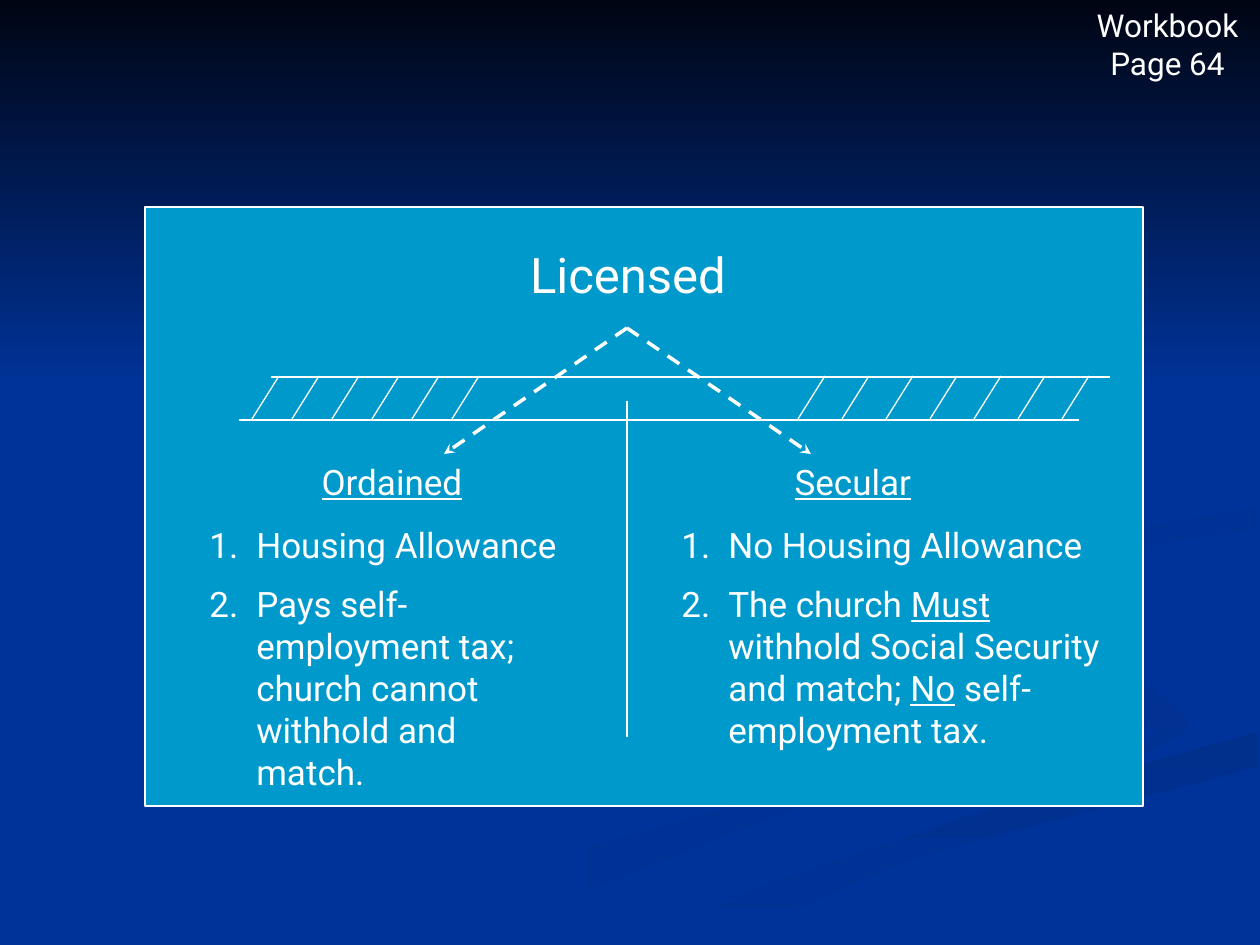
"""Build the slide that compares ordained and secular tax rules for licensed ministers."""
from lxml import etree
from pptx import Presentation
from pptx.dml.color import RGBColor
from pptx.enum.dml import MSO_LINE
from pptx.enum.shapes import MSO_CONNECTOR, MSO_SHAPE
from pptx.enum.text import PP_ALIGN
from pptx.oxml.ns import qn
from pptx.util import Pt

PX = 914400 / 126
WHITE = RGBColor(0xFF, 0xFF, 0xFF)
BLUE = RGBColor(0x00, 0x33, 0x99)
DEEP = RGBColor(0x00, 0x31, 0x93)
DUSK = RGBColor(0x00, 0x2F, 0x8C)
HAZE = RGBColor(0x00, 0x30, 0x91)
NIGHT = RGBColor(0x00, 0x05, 0x14)
CYAN = RGBColor(0x00, 0x99, 0xCC)
FONT = "Roboto"
DASH = MSO_LINE.DASH
LINE = MSO_CONNECTOR.STRAIGHT
RECT = MSO_SHAPE.RECTANGLE
CENTER = PP_ALIGN.CENTER

deck = Presentation()
deck.slide_width, deck.slide_height = round(1260 * PX), round(945 * PX)
slide = deck.slides.add_slide(deck.slide_layouts[6])
slide.background.fill.solid()
slide.background.fill.fore_color.rgb = BLUE
shapes = slide.shapes


def write(area, size, paras, listed=False):
    frame = shapes.add_textbox(*[round(n * PX) for n in area]).text_frame
    frame.word_wrap = True
    for i, runs in enumerate(paras):
        para = frame.paragraphs[0] if i == 0 else frame.add_paragraph()
        if listed:
            props = para._p.get_or_add_pPr()
            props.set("marL", str(round(47 * PX)))
            props.set("indent", str(round(-47 * PX)))
            etree.SubElement(props, qn("a:buFont"), typeface="+mj-lt")
            etree.SubElement(props, qn("a:buAutoNum"), type="arabicPeriod")
        else:
            para.alignment = CENTER
        if i:
            para.space_before = Pt(size / 2)
        for text, under in runs:
            run = para.add_run()
            run.text = text
            run.font.name = FONT
            run.font.size = Pt(size)
            run.font.color.rgb = WHITE
            run.font.underline = under


def rule(x1, y1, x2, y2, width=0.75):
    line = shapes.add_connector(LINE, *[round(n * PX) for n in (x1, y1, x2, y2)])
    line.line.color.rgb = WHITE
    line.line.width = Pt(width)
    etree.SubElement(line._element.spPr, qn("a:effectLst"))
    return line


swirls = [
    (BLUE, DEEP, 0, [
        (984, 697), (740, 606), (718, 595), (984, 701), (931, 753),
        (577, 849), (378, 944), (455, 944), (748, 827), (1008, 732)]),
    (BLUE, DEEP, 315, [
        (1188, 718), (1140, 680), (955, 627), (912, 585), (951, 636),
        (1109, 692), (1157, 732), (1126, 762), (1186, 732)]),
    (DUSK, BLUE, 270, [
        (634, 944), (719, 944), (909, 859), (1257, 767), (1257, 732),
        (1004, 804), (755, 889)]),
    (HAZE, BLUE, 315, [
        (984, 580), (1041, 625), (1027, 578), (1129, 548), (1257, 529),
        (1257, 507), (1034, 547)]),
    (NIGHT, BLUE, 270, [(0, 0), (0, 388), (1260, 388), (1260, 0)]),
]
for first, last, angle, points in swirls:
    pen = shapes.build_freeform(*points[0], scale=PX)
    pen.add_line_segments(points[1:])
    swirl = pen.convert_to_shape()
    swirl.shadow.inherit = False
    swirl.line.fill.background()
    swirl.fill.gradient()
    swirl.fill.gradient_angle = angle
    for stop, tone in zip(swirl.fill.gradient_stops, (first, last)):
        stop.color.rgb = tone

panel = shapes.add_shape(RECT, *[round(n * PX) for n in (145, 207, 998, 599)])
panel.shadow.inherit = False
panel.fill.solid()
panel.fill.fore_color.rgb = CYAN
panel.line.color.rgb = WHITE
panel.line.width = Pt(0.75)

write((444, 238, 368, 72), 28, [[("Licensed", False)]])
write((1075, 0, 185, 88), 18, [[("Workbook Page 64", False)]])

sides = [
    ("Ordained", 208, 197, 388, [
        [("Housing Allowance", False)],
        [("Pays self-employment tax; church cannot withhold and match.", False)]]),
    ("Secular", 669, 669, 472, [
        [("No Housing Allowance", False)],
        [("The church ", False), ("Must", True),
         (" withhold Social Security and match; ", False), ("No", True),
         (" self-employment tax.", False)]]),
]
for head, left, edge, width, points in sides:
    write((left, 454, 368, 54), 20, [[(head, True)]])
    write((edge, 517, width, 243), 20, points, True)

rule(271, 377, 1110, 377)
rule(239, 420, 1079, 420)
rule(627, 401, 627, 737)
for start, step, count in [(279, 40, 6), (825, 44, 7)]:
    for i in range(count):
        x = start + step * i
        rule(x, 376, x - 27, 419)
for x in (444, 811):
    arrow = rule(627, 328, x, 454, 2)
    arrow.line.dash_style = DASH
    etree.SubElement(arrow.line._get_or_add_ln(), qn("a:tailEnd"), type="stealth")

deck.save("out.pptx")
